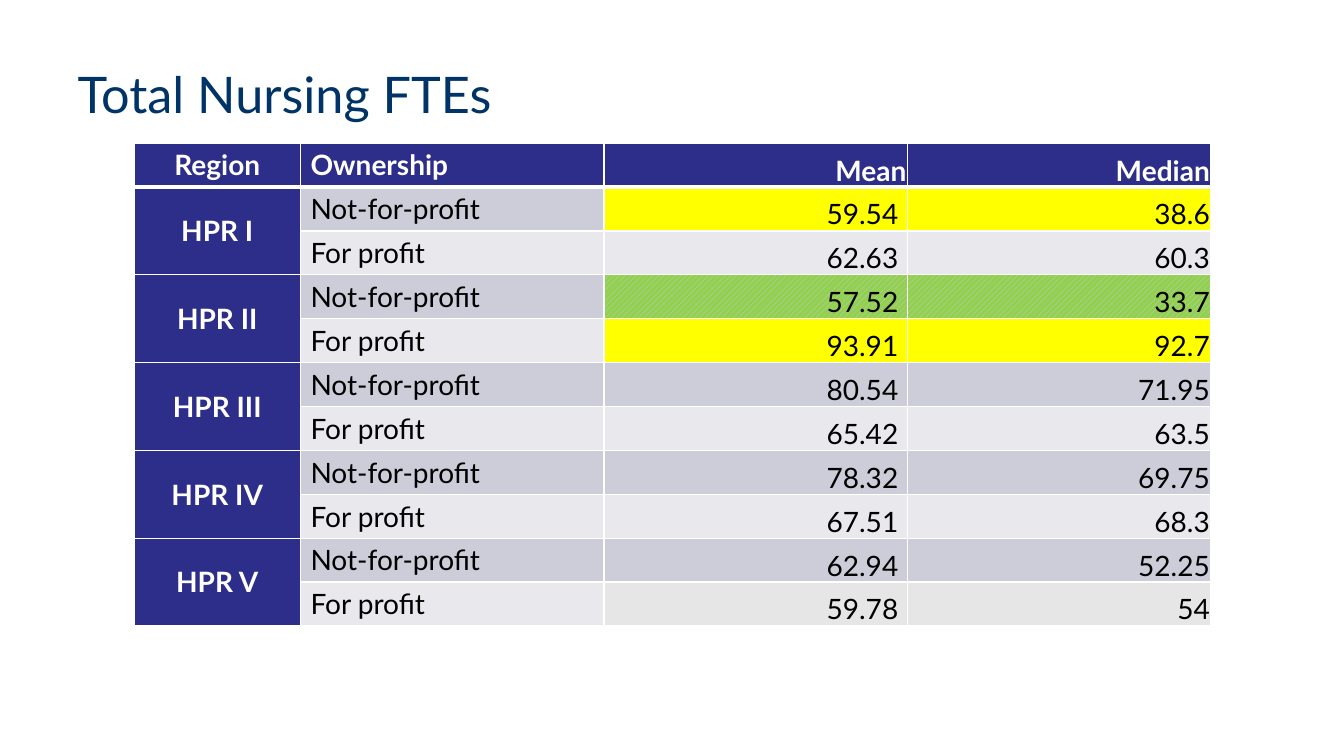
from dataclasses import dataclass

from lxml.etree import SubElement
from pptx import Presentation
from pptx.dml.color import RGBColor
from pptx.enum.dml import MSO_PATTERN
from pptx.enum.text import MSO_ANCHOR as Anchor, PP_ALIGN as Align
from pptx.oxml.ns import qn
from pptx.util import Inches, Pt

# Content
TITLE = "Total Nursing FTEs"
HEADERS = ["Region", "Ownership", "Mean", "Median"]
OWNERSHIP = ["Not-for-profit", "For profit"]
REGIONS = {  # region: (mean, median) for each kind of ownership
    "HPR I": [("59.54", "38.6"), ("62.63", "60.3")],
    "HPR II": [("57.52", "33.7"), ("93.91", "92.7")],
    "HPR III": [("80.54", "71.95"), ("65.42", "63.5")],
    "HPR IV": [("78.32", "69.75"), ("67.51", "68.3")],
    "HPR V": [("62.94", "52.25"), ("59.78", "54")],
}


@dataclass(frozen=True)
class Theme:
    font: str = "Lato"
    title_size: int = 36
    table_size: int = 20
    title: str = "003366"
    header: str = "2D2D8A"
    bands: tuple = ("CDCDDA", "E8E8ED")
    yellow: str = "FFFF00"
    green: str = "92D050"
    grey: str = "E6E6E6"
    white: str = "FFFFFF"
    black: str = "000000"


THEME = Theme()
HATCHED = "hatched"
HIGHLIGHTS = {  # fill of the two value cells
    ("HPR I", "Not-for-profit"): THEME.yellow,
    ("HPR II", "Not-for-profit"): HATCHED,
    ("HPR II", "For profit"): THEME.yellow,
    ("HPR V", "For profit"): THEME.grey,
}
COLUMN_WIDTHS = [1.65, 3.01, 3.01, 3.01]
ROW_HEIGHT = 0.43


def write(frame, text, size=THEME.table_size, color=THEME.black, bold=False, align=Align.LEFT):
    paragraph = frame.paragraphs[0]
    paragraph.alignment = align
    run = paragraph.add_run()
    run.text = text
    run.font.name = THEME.font
    run.font.size = Pt(size)
    run.font.bold = bold
    run.font.color.rgb = RGBColor.from_string(color)


def set_borders(cell, top=1, bottom=1):
    properties = cell._tc.get_or_add_tcPr()
    for side, width in (("L", 1), ("R", 1), ("T", top), ("B", bottom)):
        line = SubElement(properties, qn(f"a:ln{side}"), w=str(Pt(width)))
        fill = SubElement(line, qn("a:solidFill"))
        SubElement(fill, qn("a:srgbClr"), val=THEME.white)


def set_fill(cell, color):
    if color == HATCHED:
        cell.fill.patterned()
        cell.fill.pattern = MSO_PATTERN.WIDE_UPWARD_DIAGONAL
        cell.fill.fore_color.rgb = RGBColor.from_string(THEME.bands[0])
        cell.fill.back_color.rgb = RGBColor.from_string(THEME.green)
    else:
        cell.fill.solid()
        cell.fill.fore_color.rgb = RGBColor.from_string(color)


def fill_row(table, row, texts, fills, header=False):
    for column, (text, color) in enumerate(zip(texts, fills)):
        cell = table.cell(row, column)
        set_borders(cell, top=3 if row == 1 else 1, bottom=3 if header else 1)
        set_fill(cell, color)
        align = Align.LEFT
        if column == 0:
            align, cell.vertical_anchor = Align.CENTER, Anchor.MIDDLE
        elif column > 1:
            align, cell.vertical_anchor = Align.RIGHT, Anchor.BOTTOM
            cell.margin_left = cell.margin_top = Inches(0.01)
            cell.margin_bottom = 0
            # Mean values sit a little in from the column edge
            cell.margin_right = Inches(0.09 if column == 2 and not header else 0.01)
        if text:
            strong = header or column == 0
            write(cell.text_frame, text, bold=strong, align=align,
                  color=THEME.white if strong else THEME.black)


def main():
    presentation = Presentation()
    presentation.slide_width = Inches(13.33)
    presentation.slide_height = Inches(7.5)
    slide = presentation.slides.add_slide(presentation.slide_layouts[5])

    # Title
    title = slide.shapes.title
    title.left, title.top = Inches(0.67), Inches(0.3)
    title.width, title.height = Inches(12), Inches(1.25)
    title.text_frame.vertical_anchor = Anchor.MIDDLE
    write(title.text_frame, TITLE, size=THEME.title_size, color=THEME.title)

    # Table
    row_count = 1 + len(REGIONS) * len(OWNERSHIP)
    table = slide.shapes.add_table(
        row_count, len(HEADERS), Inches(1.33), Inches(1.42),
        Inches(sum(COLUMN_WIDTHS)), Inches(ROW_HEIGHT * row_count)).table
    table.first_row = table.horz_banding = False
    for column, width in zip(table.columns, COLUMN_WIDTHS):
        column.width = Inches(width)

    # Header row, then one pair of rows for each region
    fill_row(table, 0, HEADERS, [THEME.header] * len(HEADERS), header=True)
    row = 1
    for region, pairs in REGIONS.items():
        table.cell(row, 0).merge(table.cell(row + 1, 0))
        for index, (owner, values) in enumerate(zip(OWNERSHIP, pairs)):
            band = THEME.bands[index]
            value_fill = HIGHLIGHTS.get((region, owner), band)
            fill_row(table, row, ["" if index else region, owner, *values],
                     [THEME.header, band, value_fill, value_fill])
            row += 1

    presentation.save("out.pptx")


if __name__ == "__main__":
    main()
